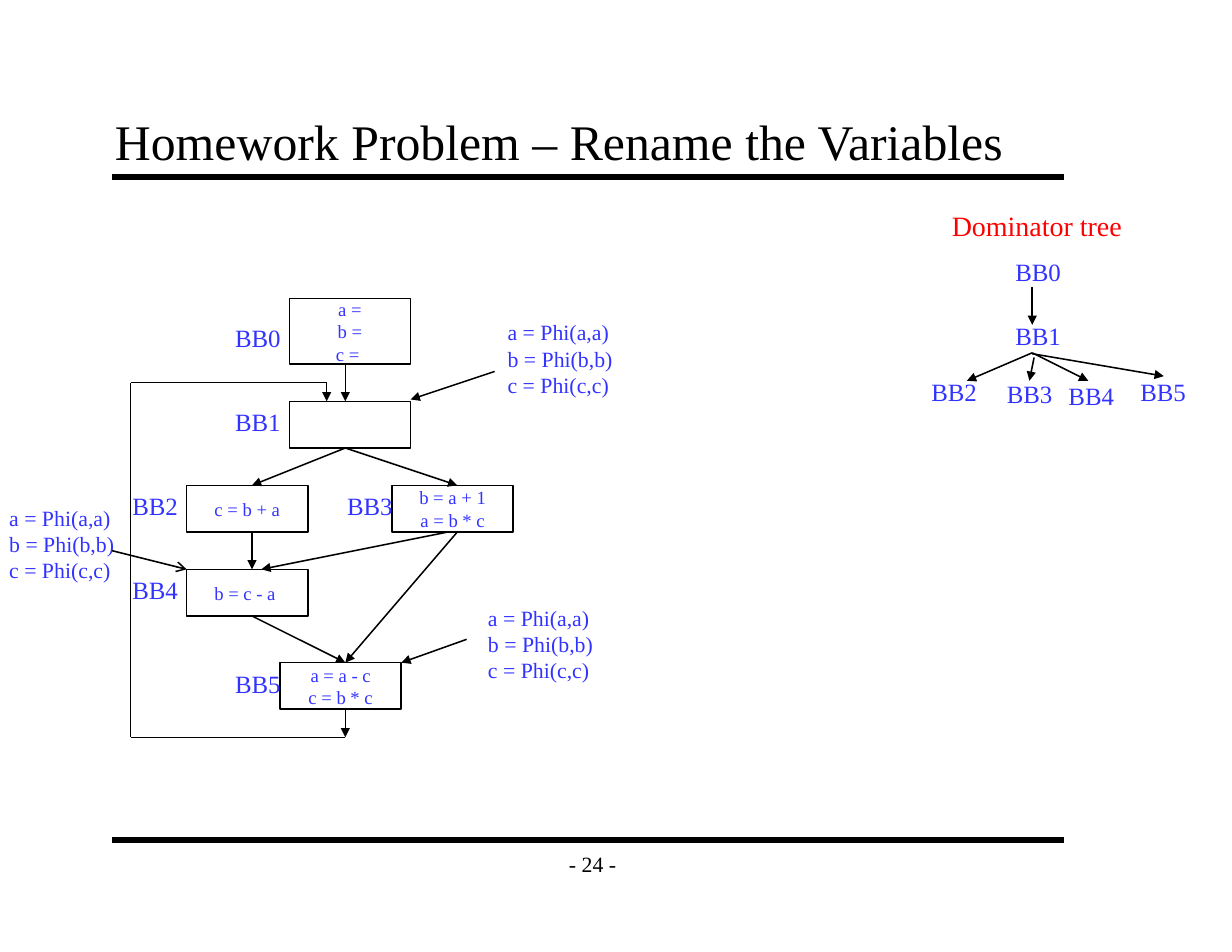
from dataclasses import dataclass

from lxml import etree
from pptx import Presentation
from pptx.dml.color import RGBColor
from pptx.enum.shapes import MSO_CONNECTOR, MSO_SHAPE
from pptx.enum.text import MSO_ANCHOR, PP_ALIGN
from pptx.oxml.ns import qn
from pptx.util import Inches, Pt

STRAIGHT = MSO_CONNECTOR.STRAIGHT
RECTANGLE = MSO_SHAPE.RECTANGLE
TOP, MIDDLE, BOTTOM = MSO_ANCHOR.TOP, MSO_ANCHOR.MIDDLE, MSO_ANCHOR.BOTTOM
LEFT, CENTER = PP_ALIGN.LEFT, PP_ALIGN.CENTER


@dataclass(frozen=True)
class Theme:
    font: str = "Times New Roman"
    black: RGBColor = RGBColor(0x00, 0x00, 0x00)
    blue: RGBColor = RGBColor(0x33, 0x33, 0xFF)
    red: RGBColor = RGBColor(0xFF, 0x00, 0x00)
    title: int = 32
    heading: int = 18
    label: int = 16
    note: int = 14
    code: int = 12
    thin: int = 1
    thick: int = 4


@dataclass(frozen=True)
class Block:
    name: str
    code: str
    col: float
    row: float
    label_col: float
    label_row: float
    rows: float = 5


@dataclass(frozen=True)
class Label:
    text: str
    col: float
    row: float


@dataclass(frozen=True)
class Edge:
    col1: float
    row1: float
    col2: float
    row2: float
    head: str = "triangle"


THEME = Theme()
CELLS_PER_INCH = 12
BLOCK_COLS = 13
PHI = "a = Phi(a,a)\nb = Phi(b,b)\nc = Phi(c,c)"

BLOCKS = [
    Block("BB0", "a =\nb =\nc = ", 31, 32, 24, 34, 7),
    Block("BB1", "", 31, 43, 24, 43),
    Block("BB2", "c = b + a", 20, 52, 13, 52),
    Block("BB3", "b = a + 1\na = b * c", 42, 52, 36, 52),
    Block("BB4", "b = c - a ", 20, 61, 13, 61),
    Block("BB5", "a = a - c\nc = b * c", 30, 71, 24, 71),
]
FLOW_EDGES = [
    Edge(37, 39, 37, 43),
    Edge(37, 48, 27, 52),
    Edge(37, 48, 49, 52),
    Edge(27, 57, 27, 61),
    Edge(48, 57, 28, 61),
    Edge(49, 57, 37, 71),
    Edge(27, 66, 37, 71),
    Edge(37, 76, 37, 79),
]
BACK_EDGE = [(37, 79), (14, 79), (14, 41), (35, 41), (35, 43)]
PHI_NOTES = [Label(PHI, 53.2, 33.6), Label(PHI, 51.1, 64.2), Label(PHI, -0.2, 53.5)]
PHI_EDGES = [
    Edge(53, 39.8, 44, 42.8),
    Edge(50, 68.5, 43, 71),
    Edge(12, 59, 20, 61, "arrow"),
]
TREE_NODES = [
    Label("BB0", 107.6, 26.9),
    Label("BB1", 107.6, 33.8),
    Label("BB2", 98.6, 39.8),
    Label("BB3", 106.7, 40),
    Label("BB4", 113.3, 40.2),
    Label("BB5", 121, 39.8),
]
TREE_EDGES = [
    Edge(110.6, 30.8, 110.6, 34.8),
    Edge(110.6, 37.8, 103.6, 40.8),
    Edge(110.8, 38.3, 110.3, 40.8),
    Edge(110.6, 37.8, 116.6, 40.8),
    Edge(110.6, 37.9, 124.7, 40.3),
]


def grid(*cells: float) -> list[int]:
    return [Inches(cell / CELLS_PER_INCH) for cell in cells]


def write(tf, text: str, size: int, color: RGBColor, align=LEFT, anchor=TOP) -> None:
    tf.text = text
    tf.word_wrap = False
    tf.vertical_anchor = anchor
    for p in tf.paragraphs:
        p.alignment = align
        for r in p.runs:
            r.font.name = THEME.font
            r.font.size = Pt(size)
            r.font.color.rgb = color


def add_text(s, label: Label, cols: float, rows: float, size: int, color: RGBColor,
             align=LEFT, anchor=TOP):
    sp = s.shapes.add_textbox(*grid(label.col, label.row, cols, rows))
    write(sp.text_frame, label.text, size, color, align, anchor)
    return sp.text_frame


def add_name(s, label: Label) -> None:
    add_text(s, label, 7.3, 4.4, THEME.label, THEME.blue)


def add_block(s, block: Block) -> None:
    sp = s.shapes.add_shape(RECTANGLE, *grid(block.col, block.row, BLOCK_COLS, block.rows))
    sp.shadow.inherit = False
    sp.fill.background()
    sp.line.color.rgb = THEME.black
    sp.line.width = Pt(THEME.thin)
    write(sp.text_frame, block.code, THEME.code, THEME.blue, CENTER, MIDDLE)
    add_name(s, Label(block.name, block.label_col, block.label_row))


def add_edge(s, edge: Edge, width: int = THEME.thin) -> None:
    ends = grid(edge.col1, edge.row1, edge.col2, edge.row2)
    line = s.shapes.add_connector(STRAIGHT, *ends)
    line.line.color.rgb = THEME.black
    line.line.width = Pt(width)
    if edge.head:
        ln = line.line._get_or_add_ln()
        etree.SubElement(ln, qn("a:tailEnd"), type=edge.head)
    etree.SubElement(line._element.spPr, qn("a:effectLst"))


def add_frame(s) -> None:
    for row in (19, 90):
        add_edge(s, Edge(12, row, 114, row, ""), THEME.thick)
    title = Label("Homework Problem – Rename the Variables", 11, 11)
    page = Label("- 24 -", 59, 90)
    frames = [
        add_text(s, title, 102, 8, THEME.title, THEME.black, anchor=BOTTOM),
        add_text(s, page, 9, 5, THEME.note, THEME.black, CENTER, MIDDLE),
    ]
    for tf in frames:
        tf.margin_left = tf.margin_right = Inches(0.11)
        tf.margin_top = tf.margin_bottom = Inches(0.06)
    frames[0].word_wrap = True


def add_flow_graph(s) -> None:
    for block in BLOCKS:
        add_block(s, block)
    last = len(BACK_EDGE) - 2
    for i, (start, end) in enumerate(zip(BACK_EDGE, BACK_EDGE[1:])):
        add_edge(s, Edge(*start, *end, "triangle" if i == last else ""))
    for note in PHI_NOTES:
        add_text(s, note, 13.8, 9.7, THEME.note, THEME.blue)
    for edge in FLOW_EDGES + PHI_EDGES:
        add_edge(s, edge)


def add_dominator_tree(s) -> None:
    heading = Label("Dominator tree", 100.8, 21.8)
    add_text(s, heading, 20.9, 4.8, THEME.heading, THEME.red)
    for node in TREE_NODES:
        add_name(s, node)
    for edge in TREE_EDGES:
        add_edge(s, edge)


def main() -> None:
    prs = Presentation()
    prs.slide_width, prs.slide_height = Inches(11), Inches(8.5)
    s = prs.slides.add_slide(prs.slide_layouts[6])
    add_frame(s)
    add_flow_graph(s)
    add_dominator_tree(s)
    prs.save("out.pptx")


if __name__ == "__main__":
    main()
